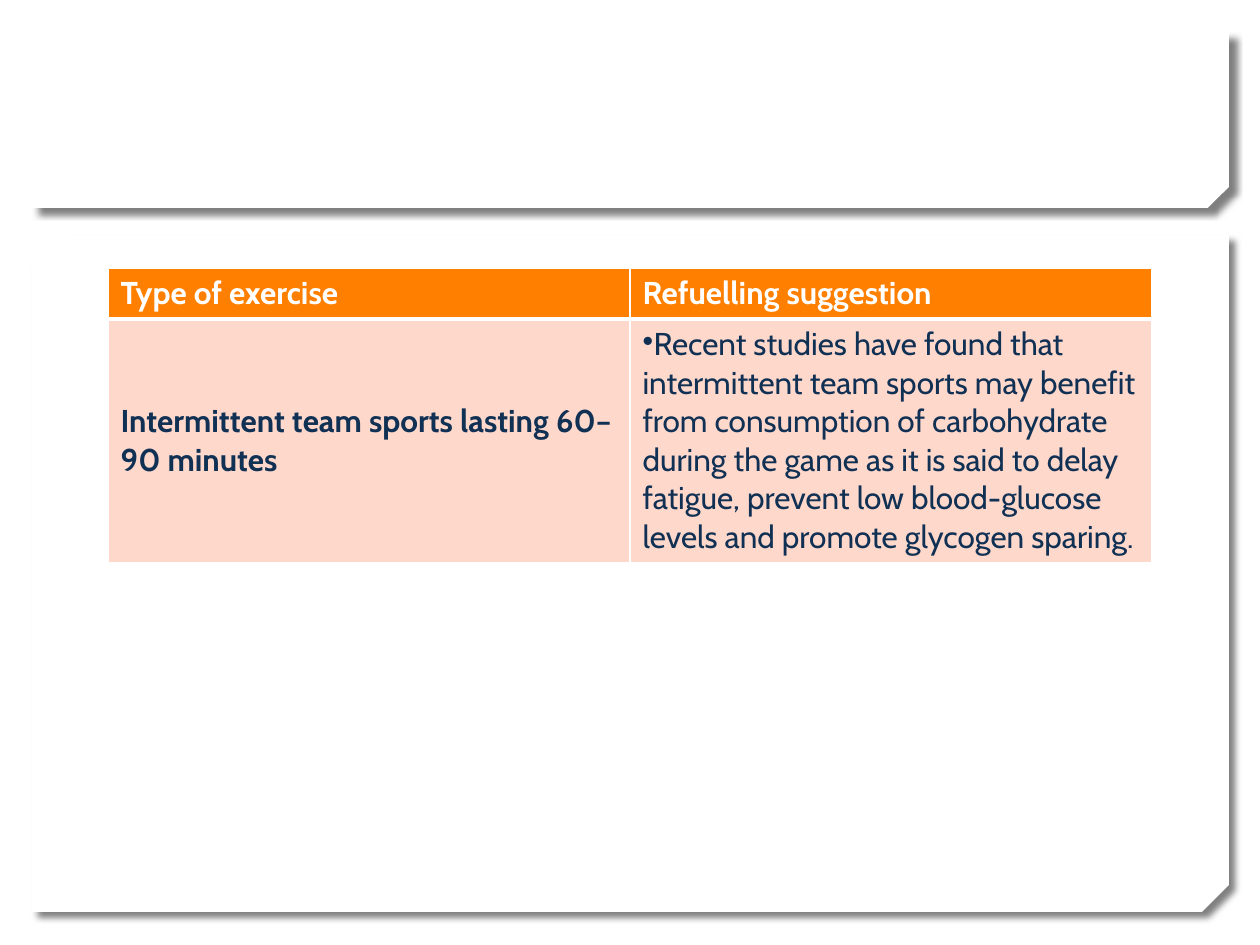
from lxml import etree
from pptx import Presentation
from pptx import util as u
from pptx.dml.color import RGBColor
from pptx.enum import shapes, text
from pptx.oxml import parse_xml
from pptx.oxml.ns import nsdecls, qn

FONT = "Cabin"
WHITE, ORANGE, PINK, NAVY = "FFFFFF", "FF7F01", "FFD8CC", "103154"
BULLET = "•"
ROWS = [
    ["Type of exercise", "Refuelling suggestion"],
    ["Intermittent team sports lasting 60–90 minutes",
     "Recent studies have found that intermittent team sports may benefit "
     "from consumption of carbohydrate during the game as it is said to "
     "delay fatigue, prevent low blood-glucose levels and promote "
     "glycogen sparing."],
]


def px(n):
    return u.Emu(round(n * 914400 / 126))


def color(code):
    return RGBColor.from_string(code)


def add_panel(slide, top, height, snip):
    """White card with snipped corners and a soft shadow."""
    card = slide.shapes.add_shape(
        shapes.MSO_SHAPE.SNIP_2_DIAG_RECTANGLE,
        px(32), px(top), px(1197), px(height))
    card.adjustments[0] = 0
    card.adjustments[1] = snip
    card.fill.solid()
    card.fill.fore_color.rgb = color(WHITE)
    card.line.fill.background()
    props = card._element.spPr
    props.find(qn("a:xfrm")).set("flipV", "1")
    props.append(parse_xml(
        f'<a:effectLst {nsdecls("a")}><a:outerShdw blurRad="{u.Pt(4)}" '
        f'dist="{u.Pt(5)}" dir="2700000" algn="tl" rotWithShape="0">'
        '<a:srgbClr val="000000"><a:alpha val="50000"/></a:srgbClr>'
        '</a:outerShdw></a:effectLst>'))


def set_edges(cell, top, bottom):
    """White cell borders, widths in points."""
    props = cell._tc.get_or_add_tcPr()
    edges = [("L", 1), ("R", 1), ("T", top), ("B", bottom)]
    for place, (side, width) in enumerate(edges):
        props.insert(place, parse_xml(
            f'<a:ln{side} {nsdecls("a")} w="{u.Pt(width)}"><a:solidFill>'
            f'<a:srgbClr val="{WHITE}"/></a:solidFill></a:ln{side}>'))


def fill_cell(cell, words, fill, ink, bold):
    cell.fill.solid()
    cell.fill.fore_color.rgb = color(fill)
    cell.vertical_anchor = text.MSO_ANCHOR.MIDDLE
    para = cell.text_frame.paragraphs[0]
    run = para.add_run()
    run.text = words
    run.font.name = FONT
    run.font.size = u.Pt(18)
    run.font.bold = bold
    run.font.color.rgb = color(ink)
    return para


def add_bullet(para):
    props = para._p.get_or_add_pPr()
    props.set("marL", "0")
    props.set("indent", "0")
    etree.SubElement(props, qn("a:buChar")).set("char", BULLET)


def add_grid(slide):
    heights = [51, 242]
    grid = slide.shapes.add_table(
        2, 2, px(108), px(268), px(1044), px(sum(heights))).table
    for row, height in zip(grid.rows, heights):
        row.height = px(height)
    for r, line in enumerate(ROWS):
        for c, words in enumerate(line):
            cell = grid.cell(r, c)
            head = r == 0
            para = fill_cell(cell, words, ORANGE if head else PINK,
                             WHITE if head else NAVY, head or c == 0)
            set_edges(cell, 1 if head else 3, 3 if head else 1)
            if not head and c == 1:
                add_bullet(para)


def main():
    deck = Presentation()
    deck.slide_width, deck.slide_height = px(1260), px(945)
    slide = deck.slides.add_slide(deck.slide_layouts[6])
    # Body and title cards
    add_panel(slide, 235, 677, 0.04)
    add_panel(slide, 32, 176, 0.12)
    # Refuelling table
    add_grid(slide)
    deck.save("out.pptx")


if __name__ == "__main__":
    main()
